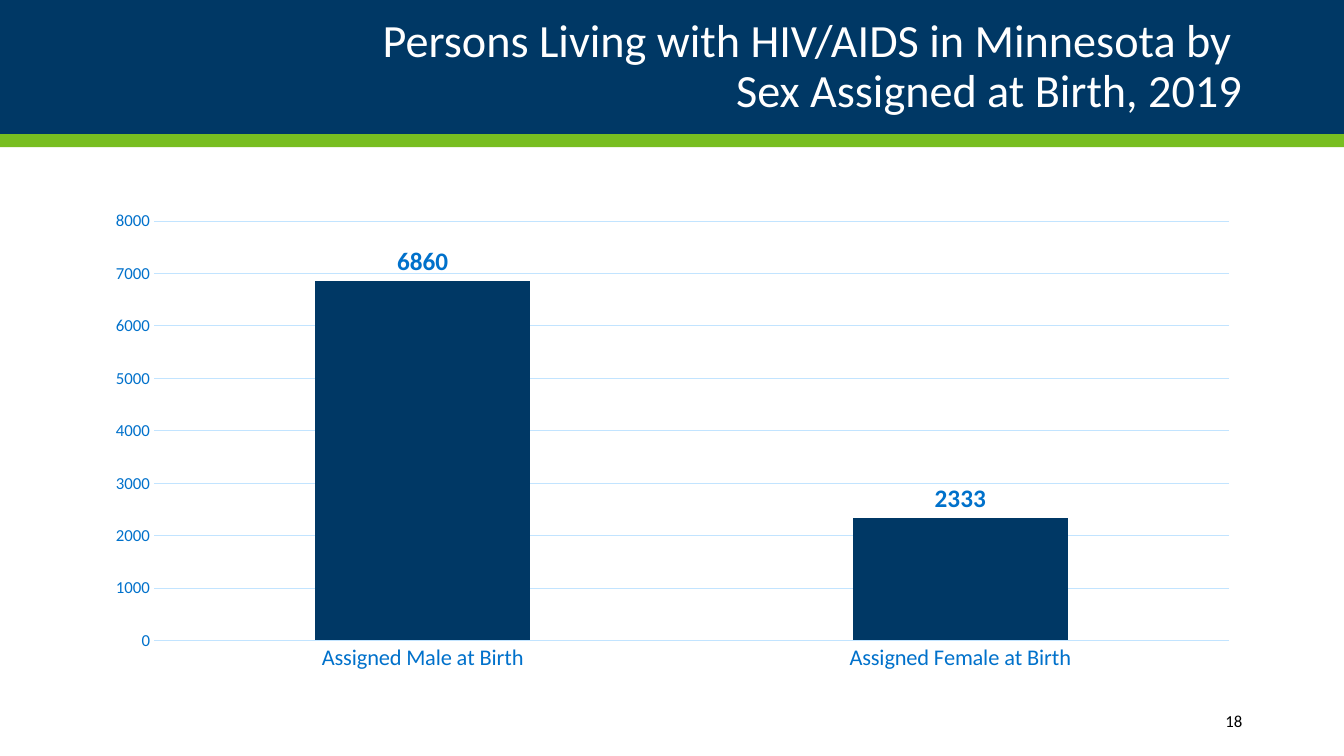
from dataclasses import dataclass

import pptx
import pptx.chart.data
import pptx.dml.color
import pptx.enum.chart
import pptx.enum.shapes
import pptx.enum.text
import pptx.util

Inches = pptx.util.Inches
Pt = pptx.util.Pt


@dataclass(frozen=True)
class Theme:
    font: str = "Calibri"
    navy: str = "003865"
    green: str = "78BE21"
    blue: str = "0071CB"
    pale: str = "C2E4FF"
    white: str = "FFFFFF"
    black: str = "000000"
    title: int = 33
    value: int = 18
    category: int = 16
    small: int = 12


def rgb(color):
    return pptx.dml.color.RGBColor.from_string(color)


def set_font(font, name, size, color, bold=False):
    font.name = name
    font.size = Pt(size)
    font.bold = bold
    font.color.rgb = rgb(color)


def write(tf, text, *, font, size, color, align, spacing=1.0):
    p = tf.paragraphs[0]
    p.alignment = align
    p.line_spacing = spacing
    for i, line in enumerate(text.split("\n")):
        if i:
            p.add_line_break()
        r = p.add_run()
        r.text = line
        set_font(r.font, font, size, color)


class SlideBuilder:
    def __init__(self, s, theme):
        self.s = s
        self.theme = theme

    def band(self, top, height, color):
        sp = self.s.shapes.add_shape(
            pptx.enum.shapes.MSO_SHAPE.RECTANGLE,
            Inches(0), Inches(top), Inches(13.33), Inches(height))
        sp.shadow.inherit = False
        sp.fill.solid()
        sp.fill.fore_color.rgb = rgb(color)
        sp.line.fill.background()

    def text(self, box, text, size, color, spacing=1.0):
        sp = self.s.shapes.add_textbox(*map(Inches, box))
        tf = sp.text_frame
        tf.word_wrap = True
        tf.vertical_anchor = pptx.enum.text.MSO_ANCHOR.MIDDLE
        write(tf, text, font=self.theme.font, size=size, color=color,
              align=pptx.enum.text.PP_ALIGN.RIGHT, spacing=spacing)

    def axis(self, axis, size):
        axis.major_tick_mark = pptx.enum.chart.XL_TICK_MARK.NONE
        axis.minor_tick_mark = pptx.enum.chart.XL_TICK_MARK.NONE
        set_font(axis.tick_labels.font, self.theme.font, size, self.theme.blue)

    def hairline(self, line):
        line.color.rgb = rgb(self.theme.pale)
        line.width = Pt(0.75)

    def columns(self, box, name, counts):
        t = self.theme
        data = pptx.chart.data.CategoryChartData()
        data.categories = list(counts)
        data.add_series(name, list(counts.values()))
        chart = self.s.shapes.add_chart(
            pptx.enum.chart.XL_CHART_TYPE.COLUMN_CLUSTERED,
            *map(Inches, box), data).chart
        chart.has_title = False
        chart.has_legend = False
        set_font(chart.font, t.font, 10, t.navy)

        self.axis(chart.category_axis, t.category)
        self.hairline(chart.category_axis.format.line)
        values = chart.value_axis
        self.axis(values, t.small)
        values.minimum_scale, values.maximum_scale = 0, 8000
        values.major_unit = 1000
        values.tick_labels.number_format = "0"
        values.tick_labels.number_format_is_linked = False
        values.format.line.fill.background()
        self.hairline(values.major_gridlines.format.line)

        plot = chart.plots[0]
        plot.vary_by_categories = False
        plot.gap_width = 150
        plot.overlap = -27
        series = plot.series[0]
        series.format.fill.solid()
        series.format.fill.fore_color.rgb = rgb(t.navy)
        labels = series.data_labels
        labels.show_value = True
        labels.position = pptx.enum.chart.XL_LABEL_POSITION.OUTSIDE_END
        set_font(labels.font, t.font, t.value, t.blue, bold=True)


def main():
    prs = pptx.Presentation()
    prs.slide_width = Inches(13.33)
    prs.slide_height = Inches(7.5)
    t = Theme()
    slide = SlideBuilder(prs.slides.add_slide(prs.slide_layouts[6]), t)
    slide.band(0, 1.33, t.navy)
    slide.band(1.33, 0.13, t.green)
    slide.text((0.92, 0.17, 11.5, 1),
               "Persons Living with HIV/AIDS in Minnesota by \n"
               "Sex Assigned at Birth, 2019",
               t.title, t.white, spacing=0.9)
    slide.columns((0.92, 2, 11.5, 4.76), "Series 1",
                  {"Assigned Male at Birth": 6860,
                   "Assigned Female at Birth": 2333})
    slide.text((10.82, 6.95, 1.6, 0.4), "18", t.small, t.black)
    prs.save("out.pptx")


if __name__ == "__main__":
    main()
